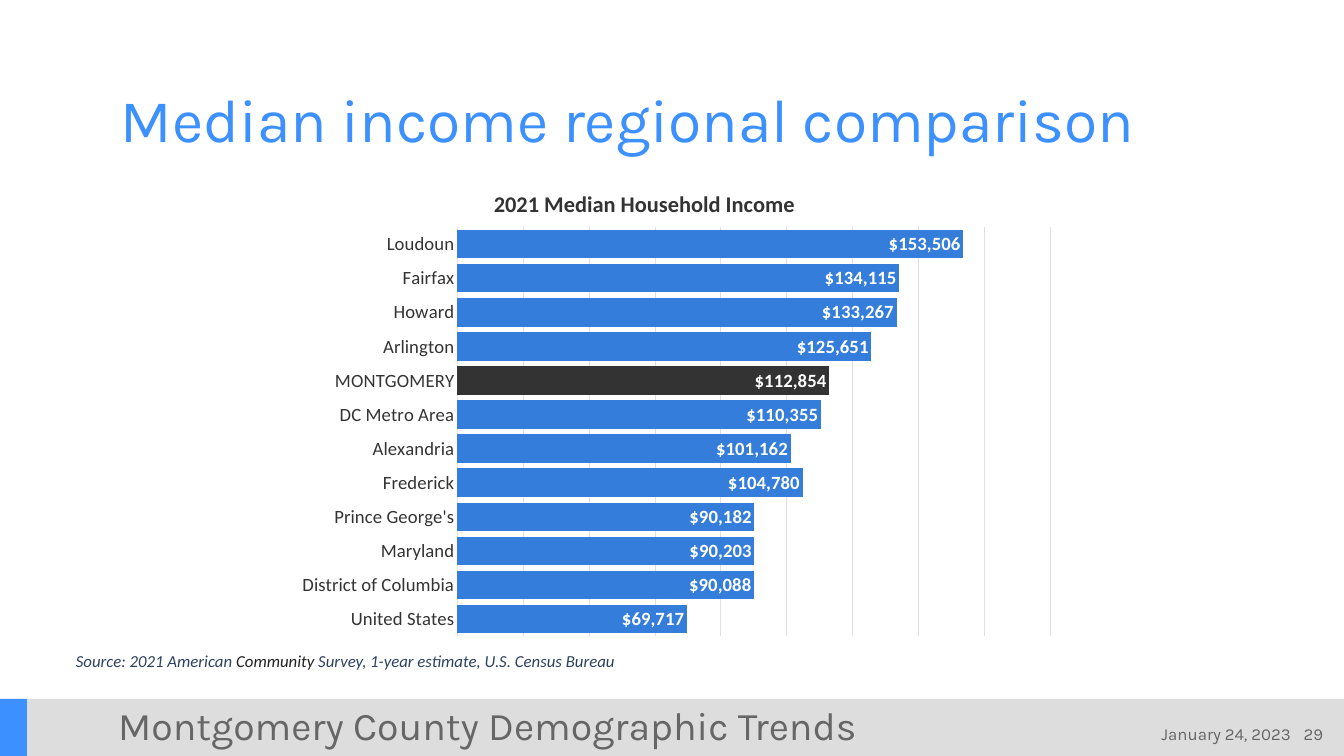
import pptx
import pptx.chart.data
import pptx.dml.color
import pptx.enum.chart
import pptx.enum.shapes
import pptx.enum.text
import pptx.oxml
import pptx.oxml.ns
import pptx.util

Inches = pptx.util.Inches
Pt = pptx.util.Pt
Align = pptx.enum.text.PP_ALIGN
Anchor = pptx.enum.text.MSO_ANCHOR


class Theme:
    heading_font = "Karla"
    body_font = "Calibri"
    accent = "3C90FF"
    band = "DDDDDD"
    muted = "666666"
    bar = "357DDB"
    dark = "333333"
    grid = "E0E0E0"
    white = "FFFFFF"
    source = "2D4261"
    source_dark = "222222"
    title_size = 65
    footer_size = 42
    chart_title_size = 24
    label_size = 20
    small_size = 18


INCOMES = {
    "United States": 69717,
    "District of Columbia": 90088,
    "Maryland": 90203,
    "Prince George's": 90182,
    "Frederick": 104780,
    "Alexandria": 101162,
    "DC Metro Area": 110355,
    "MONTGOMERY": 112854,
    "Arlington": 125651,
    "Howard": 133267,
    "Fairfax": 134115,
    "Loudoun": 153506,
}
HIGHLIGHT = "MONTGOMERY"
DOLLARS = '"$"#,##0'


def set_attributes(target, values):
    for name, value in values.items():
        setattr(target, name, value)


def rgb(color):
    return pptx.dml.color.RGBColor.from_string(color)


def format_font(font, name, size, color, **values):
    set_attributes(font, {"name": name, "size": Pt(size), **values})
    font.color.rgb = rgb(color)


def paint(fill, color):
    fill.solid()
    fill.fore_color.rgb = rgb(color)


def format_frame(frame, anchor, margins):
    sides = ("margin_left", "margin_top", "margin_right", "margin_bottom")
    set_attributes(frame, {"word_wrap": True, "vertical_anchor": anchor})
    set_attributes(frame, dict(zip(sides, map(Inches, margins))))


def add_band(slide, width, color):
    shape = slide.shapes.add_shape(
        pptx.enum.shapes.MSO_SHAPE.RECTANGLE, 0, Inches(10.4), Inches(width), Inches(0.85))
    shape.shadow.inherit = False
    shape.line.fill.background()
    paint(shape.fill, color)


def add_text(slide, box, runs, font, size, anchor=Anchor.TOP, margins=(0, 0, 0, 0),
             align=Align.LEFT, **values):
    frame = slide.shapes.add_textbox(*map(Inches, box)).text_frame
    format_frame(frame, anchor, margins)
    paragraph = frame.paragraphs[0]
    paragraph.alignment = align
    for text, color in runs:
        run = paragraph.add_run()
        run.text = text
        format_font(run.font, font, size, color, **values)


def fill_title(slide, text):
    title = slide.shapes.title
    set_attributes(title, {"left": Inches(1.8), "top": Inches(0.5),
                           "width": Inches(16.4), "height": Inches(1.8)})
    frame = title.text_frame
    frame.text = text
    frame.auto_size = pptx.enum.text.MSO_AUTO_SIZE.NONE
    format_frame(frame, Anchor.BOTTOM, (0, 0.05, 0.1, 0))
    paragraph = frame.paragraphs[0]
    set_attributes(paragraph, {"alignment": Align.LEFT, "line_spacing": 0.8})
    format_font(paragraph.runs[0].font, Theme.heading_font, Theme.title_size, Theme.accent)


def place_chart_part(part, index, **places):
    for old in part.findall(pptx.oxml.ns.qn("c:layout")):
        part.remove(old)
    target = '<c:layoutTarget val="inner"/>' if "w" in places else ""
    modes = "".join(f'<c:{side}Mode val="edge"/>' for side in "xy")
    values = "".join(f'<c:{side} val="{value}"/>' for side, value in places.items())
    part.insert(index, pptx.oxml.parse_xml(
        f'<c:layout {pptx.oxml.ns.nsdecls("c")}><c:manualLayout>'
        f'{target}{modes}{values}</c:manualLayout></c:layout>'))


def format_axes(chart):
    hidden = {"major_tick_mark": pptx.enum.chart.XL_TICK_MARK.NONE,
              "minor_tick_mark": pptx.enum.chart.XL_TICK_MARK.NONE}
    category_axis, value_axis = chart.category_axis, chart.value_axis
    set_attributes(category_axis, {**hidden, "has_major_gridlines": False})
    set_attributes(value_axis, {**hidden, "has_major_gridlines": True, "visible": False,
                                "minimum_scale": 0, "maximum_scale": 180000,
                                "major_unit": 20000})
    set_attributes(value_axis.tick_labels,
                   {"number_format": DOLLARS, "number_format_is_linked": False})
    format_font(category_axis.tick_labels.font, Theme.body_font, Theme.label_size, Theme.dark)
    for line in (category_axis.format.line, value_axis.major_gridlines.format.line):
        line.color.rgb = rgb(Theme.grid)
        line.width = Pt(0.75)


def add_income_chart(slide):
    data = pptx.chart.data.CategoryChartData(number_format=DOLLARS)
    data.categories = list(INCOMES)
    data.add_series("Series 1", list(INCOMES.values()))
    chart = slide.shapes.add_chart(
        pptx.enum.chart.XL_CHART_TYPE.BAR_CLUSTERED,
        Inches(4.27), Inches(2.54), Inches(11.61), Inches(7.06), data).chart
    set_attributes(chart, {"has_legend": False, "has_title": True})
    format_font(chart.font, Theme.body_font, 10, Theme.dark)

    title = chart.chart_title
    paragraph = title.text_frame.paragraphs[0]
    run = paragraph.add_run()
    run.text = "2021 Median Household Income"
    format_font(run.font, Theme.body_font, Theme.chart_title_size, Theme.dark, bold=True)
    format_axes(chart)

    plot = chart.plots[0]
    set_attributes(plot, {"gap_width": 20, "vary_by_categories": False})
    series = plot.series[0]
    paint(series.format.fill, Theme.bar)
    paint(series.points[list(INCOMES).index(HIGHLIGHT)].format.fill, Theme.dark)
    labels = series.data_labels
    set_attributes(labels, {"show_value": True, "number_format": DOLLARS,
                            "number_format_is_linked": False,
                            "position": pptx.enum.chart.XL_LABEL_POSITION.INSIDE_END})
    format_font(labels.font, Theme.body_font, Theme.label_size, Theme.white, bold=True)

    plot_area = chart.element.find(".//" + pptx.oxml.ns.qn("c:plotArea"))
    place_chart_part(plot_area, 0, x=0.218, y=0.119, w=0.761, h=0.862)
    place_chart_part(title.element if hasattr(title, "element") else title._element, 1,
                     x=0.26, y=0.03)


def add_footer(slide):
    add_band(slide, 20, Theme.band)
    add_band(slide, 0.4, Theme.accent)
    add_text(slide, (1.76, 10.49, 16.4, 0.6),
             [("Montgomery County Demographic Trends", Theme.muted)],
             Theme.heading_font, Theme.footer_size, Anchor.MIDDLE)
    for text, left, width in (("29", 18.72, 0.97), ("January 24, 2023", 16.4, 2.81)):
        add_text(slide, (left, 10.82, width, 0.25), [(text, Theme.muted)],
                 Theme.heading_font, Theme.small_size, Anchor.BOTTOM, align=Align.RIGHT)


def main():
    presentation = pptx.Presentation()
    set_attributes(presentation, {"slide_width": Inches(20), "slide_height": Inches(11.25)})
    slide = presentation.slides.add_slide(presentation.slide_layouts[5])
    add_footer(slide)
    fill_title(slide, "Median income regional comparison")
    add_income_chart(slide)
    add_text(slide, (0.98, 9.6, 18.04, 0.46),
             [("Source: 2021 American ", Theme.source),
              ("Community", Theme.source_dark),
              (" Survey, 1-year estimate, U.S. Census Bureau", Theme.source)],
             Theme.body_font, Theme.small_size, margins=(0.15, 0.08, 0.15, 0.08), italic=True)
    presentation.save("out.pptx")


if __name__ == "__main__":
    main()
